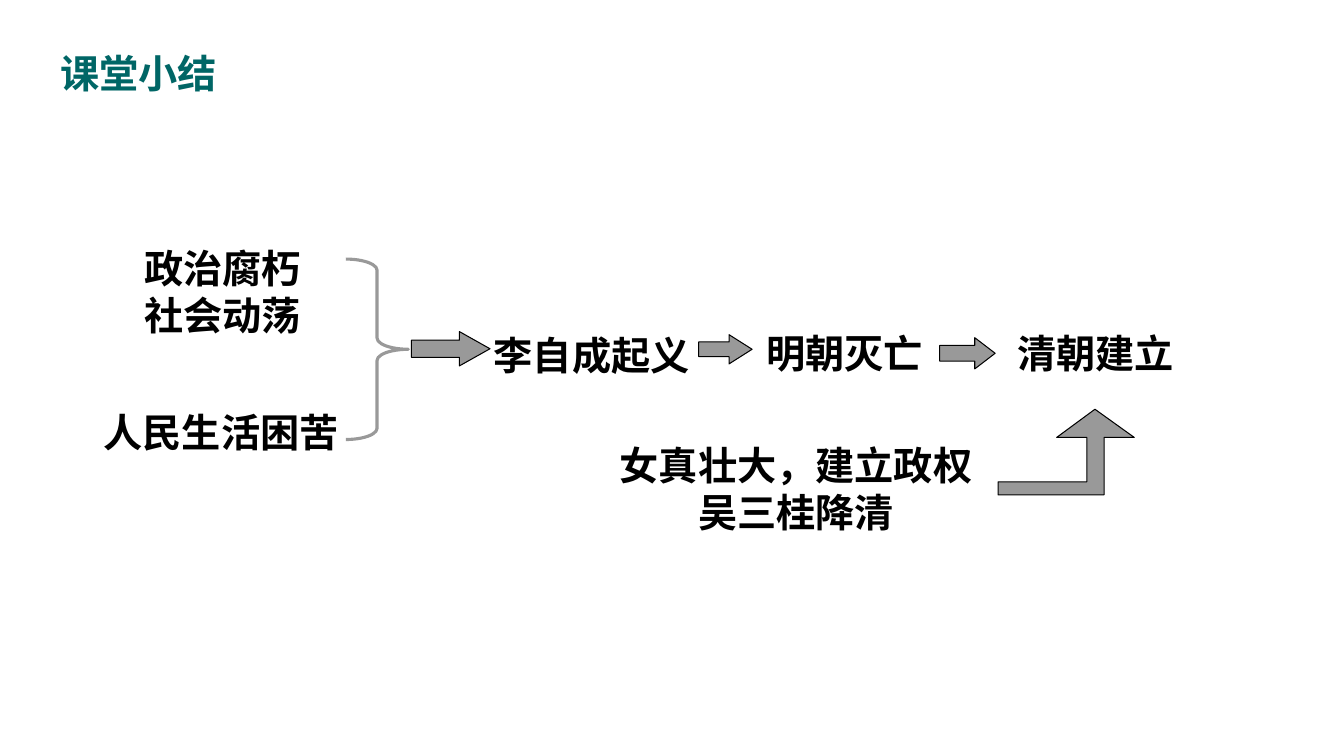
from dataclasses import dataclass

from pptx import Presentation
from pptx.dml.color import RGBColor
from pptx.enum import shapes, text
from pptx.oxml.ns import qn
from pptx.util import Inches, Pt


@dataclass(frozen=True)
class Theme:
    font: str = "Noto Sans CJK SC"
    size: float = 28
    leading: float = 33.6
    title: str = "006666"
    ink: str = "000000"
    grey: str = "999999"
    outline: float = 0.75
    brace: float = 2.25


THEME = Theme()
LINE_H = 0.57


def rgb(value):
    return RGBColor.from_string(value)


def add_text(slide, box, *lines, color=THEME.ink, align=text.PP_ALIGN.LEFT,
             indent=0, wrap=False):
    tb = slide.shapes.add_textbox(*map(Inches, box))
    tf = tb.text_frame
    tf.word_wrap = wrap
    tf.margin_top, tf.margin_bottom = Inches(0.09), Inches(0.01)
    for i, line in enumerate(lines):
        p = tf.add_paragraph() if i else tf.paragraphs[0]
        p.alignment = align
        p.line_spacing = Pt(THEME.leading)
        if indent:
            p._p.get_or_add_pPr().set("indent", str(Inches(indent)))
        r = p.add_run()
        r.text = line
        r.font.name = THEME.font
        r.font.size = Pt(THEME.size)
        r.font.bold = True
        r.font.color.rgb = rgb(color)
        ea = r._r.get_or_add_rPr().makeelement(qn("a:ea"), {"typeface": THEME.font})
        r.font._element.find(qn("a:latin")).addnext(ea)


def paint(sp, fill, line, width):
    sp.shadow.inherit = False
    if fill:
        sp.fill.solid()
        sp.fill.fore_color.rgb = rgb(fill)
    else:
        sp.fill.background()
    sp.line.color.rgb = rgb(line)
    sp.line.width = Pt(width)


def add_preset(slide, kind, box, adjustments, fill, line, width):
    sp = slide.shapes.add_shape(kind, *map(Inches, box))
    for i, value in enumerate(adjustments):
        sp.adjustments[i] = value
    paint(sp, fill, line, width)


def add_bent_arrow(slide, box):
    """Draw an arrow that runs right, then turns up."""
    x, y, w, h = box
    tip, head_y, bar_y = x + 0.96, y + 0.28, y + h - 0.13
    stem_l, stem_r = x + 0.88, x + 1.05
    points = [(tip, y), (x + 0.58, head_y), (stem_l, head_y), (stem_l, bar_y),
              (x, bar_y), (x, y + h), (stem_r, y + h), (stem_r, head_y),
              (x + w, head_y)]
    points = [(Inches(px), Inches(py)) for px, py in points]
    fb = slide.shapes.build_freeform(*points[0], scale=1.0)
    fb.add_line_segments(points[1:], close=True)
    paint(fb.convert_to_shape(), THEME.grey, THEME.ink, THEME.outline)


def add_causes(slide, box):
    x, y, w, h = box
    add_preset(slide, shapes.MSO_SHAPE.RIGHT_BRACE,
               (x + w - 0.62, y + 0.24, 0.62, 1.79), (0.179, 0.5),
               None, THEME.grey, THEME.brace)
    add_text(slide, (x + 0.11, y, 2.78, 1.07), "政治腐朽", "社会动荡",
             indent=0.29, wrap=True)
    add_text(slide, (x, y + h - LINE_H, 2.56, LINE_H), "人民生活困苦")


def add_events(slide, box):
    """Place the chain of events, each led in by an arrow."""
    x, y, _, _ = box
    # arrow left, top, width, height, head; label left, top, width, wording
    steps = [
        (0, 0.11, 0.78, 0.34, 0.891, 0.72, 0.02, 2.17, "李自成起义"),
        (2.85, 0.14, 0.53, 0.29, 0.788, 3.42, 0, 1.77, "明朝灭亡"),
        (5.24, 0.17, 0.55, 0.31, 0.653, 5.91, 0, 1.77, "清朝建立"),
    ]
    for ax, ay, aw, ah, head, tx, ty, tw, label in steps:
        add_preset(slide, shapes.MSO_SHAPE.RIGHT_ARROW,
                   (x + ax, y + ay, aw, ah), (0.5, head),
                   THEME.grey, THEME.ink, THEME.outline)
        add_text(slide, (x + tx, y + ty, tw, LINE_H), label)


def add_qing_rise(slide, box):
    x, y, w, _ = box
    add_bent_arrow(slide, (x + w - 1.35, y, 1.35, 0.85))
    add_text(slide, (x, y + 0.23, 4.01, 1.04), "女真壮大，建立政权", "吴三桂降清",
             align=text.PP_ALIGN.CENTER, wrap=True)


def main():
    prs = Presentation()
    prs.slide_width, prs.slide_height = Inches(13.33), Inches(7.5)
    slide = prs.slides.add_slide(prs.slide_layouts[6])
    add_text(slide, (0.5, 0.4, 1.78, LINE_H), "课堂小结", color=THEME.title)
    add_causes(slide, (0.93, 2.33, 3.12, 2.2))
    add_events(slide, (4.08, 3.18, 7.68, 0.59))
    add_qing_rise(slide, (5.89, 4.06, 5.36, 1.27))
    prs.save("out.pptx")


if __name__ == "__main__":
    main()
